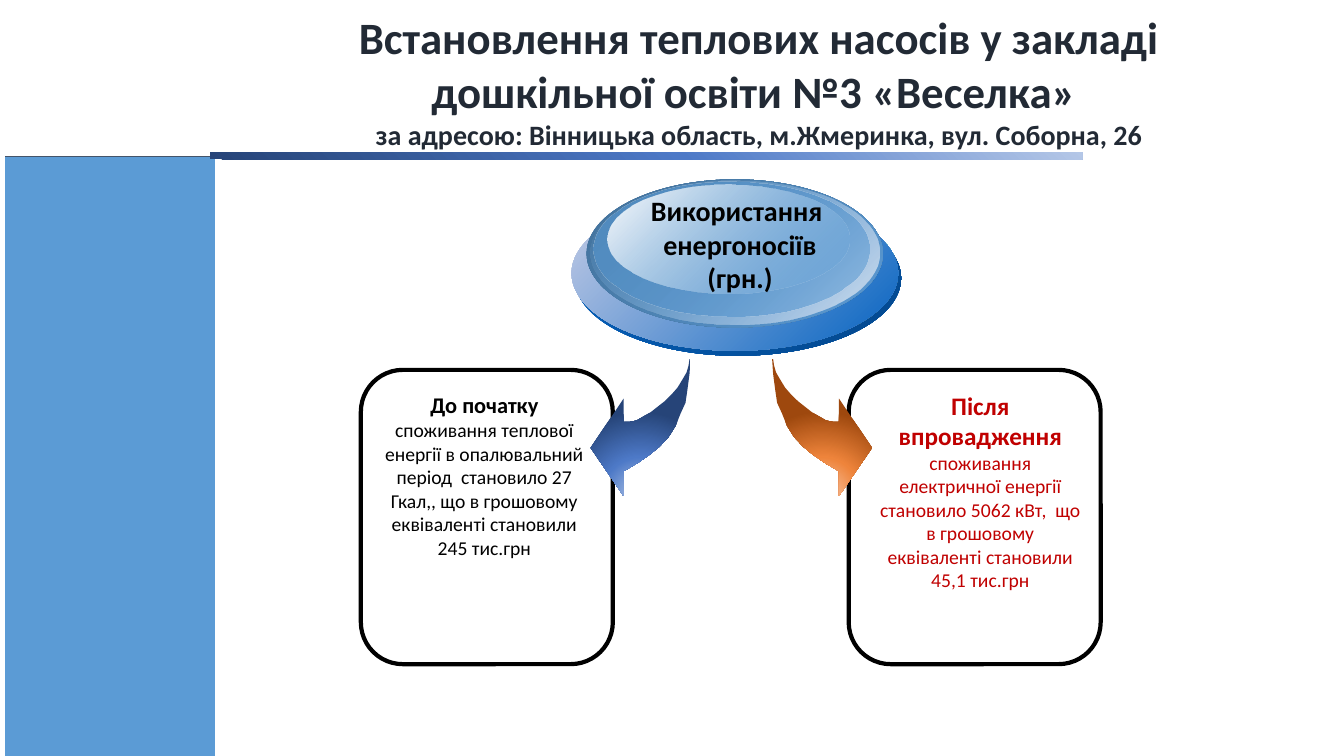
import dataclasses
import typing

import pptx
import pptx.dml.color
import pptx.enum.dml
import pptx.enum.shapes
import pptx.enum.text
import pptx.oxml
import pptx.oxml.ns
import pptx.util

SHAPES = pptx.enum.shapes.MSO_SHAPE
ANCHOR = pptx.enum.text.MSO_ANCHOR
WIDTH, HEIGHT = pptx.util.Inches(13.33), pptx.util.Inches(7.5)


# Theme: colours, gradients and type sizes
class Stop(typing.NamedTuple):
    position: int
    color: str
    opacity: int = 100


@dataclasses.dataclass(frozen=True)
class Theme:
    font: str = "Calibri"
    ink: str = "000000"
    heading: str = "222A35"
    accent: str = "C00000"
    sky: str = "5B9BD5"
    slate: str = "44546A"
    title_size: int = 32
    subtitle_size: int = 20
    after_size: int = 18
    before_size: int = 16
    body_size: int = 14
    blue: tuple[Stop, ...] = (Stop(0, "B4C7E7"), Stop(46, "4D79C7"), Stop(100, "264478"))
    orange: tuple[Stop, ...] = (Stop(0, "F8CBAD"), Stop(46, "EE843B"), Stop(100, "9E480E"))


THEME = Theme()


# Layout: every length is a percentage of the slide's width or height
class Area(typing.NamedTuple):
    left: float
    top: float
    width: float
    height: float

    def emu(self) -> tuple[int, int, int, int]:
        return (round(self.left * WIDTH / 100), round(self.top * HEIGHT / 100),
                round(self.width * WIDTH / 100), round(self.height * HEIGHT / 100))


class Run(typing.NamedTuple):
    text: str
    size: int
    color: str
    bold: bool = False


@dataclasses.dataclass(frozen=True)
class Caption:
    area: Area
    paragraphs: list[list[Run]]
    wrap: bool = True
    anchor: typing.Any = ANCHOR.TOP


@dataclasses.dataclass(frozen=True)
class Arrow:
    tail: float
    direction: int
    stops: tuple[Stop, ...]


class Layer(typing.NamedTuple):
    area: Area
    stops: tuple[Stop, ...]


CARDS = [Area(left, 48.93, 18.75, 38.93) for left in (63.15, 26.85)]
RULE = Area(15.6, 20.13, 64.95, 0.93)
SIDEBAR = Area(0.38, 20.67, 15.6, 79.33)

ARROWS = [Arrow(51.38, -1, THEME.blue), Arrow(57.45, 1, THEME.orange)]
ARROW_TOP, ARROW_WIDTH, ARROW_HEIGHT = 47.47, 7.43, 18.13
# Percentages of the arrow's width (away from the tail) and height
ARROW_OUTLINE = [
    (0, 0), (1, 11), (3, 22), (5, 32), (10, 40), (15, 49), (22, 57), (31, 64), (41, 70),
    (53, 76), (67, 82), (67, 100), (100, 65), (67, 29), (67, 46), (61, 46), (54, 45),
    (47, 42), (40, 39), (33, 35), (26, 31), (19, 26), (13, 21), (8, 15), (4, 10), (2, 5), (1, 0),
]

BUTTON = [
    Layer(Area(42.75, 26.53, 24.3, 20.53), (Stop(0, "0563C1"), Stop(100, "04488D"))),
    Layer(Area(42.53, 25.87, 24.3, 20.53), (Stop(0, "C6CDE6"), Stop(100, "0563C1"))),
    Layer(Area(43.65, 23.73, 22.05, 19.6), (Stop(0, "416F98"), Stop(100, THEME.sky))),
    Layer(Area(43.95, 23.87, 21.45, 19.07), (Stop(0, THEME.sky, 0), Stop(100, "D8E3F1"))),
    Layer(Area(44.18, 24, 20.48, 17.87), (Stop(0, "528CC0"), Stop(100, THEME.sky, 48))),
    Layer(Area(45.23, 24.4, 18, 14.4), (Stop(0, "FFFFFF"), Stop(100, THEME.sky, 38))),
]

BEFORE = Caption(Area(27.68, 51.07, 16.73, 23.73), [
    [Run("До початку", THEME.before_size, THEME.ink, True)],
    [Run("споживання теплової енергії в опалювальний період  становило 27 Гкал,, "
         "що в грошовому еквіваленті становили 245 тис.грн", THEME.body_size, THEME.ink)],
])
AFTER = Caption(Area(64.58, 50.93, 16.73, 31.47), [[
    Run("Після впровадження ", THEME.after_size, THEME.accent, True),
    Run("споживання електричної енергії становило 5062 кВт,  що в грошовому "
        "еквіваленті становили 45,1 тис.грн", THEME.body_size, THEME.accent),
]])
USAGE = Caption(Area(47.63, 24.93, 14.85, 14.8), [
    [Run(line, THEME.subtitle_size, THEME.ink, True)]
    for line in ("Використання ", "енергоносіїв", "(грн.)")
], wrap=False)
TITLE = Caption(Area(18.08, 3.87, 76.8, 13.6), [[
    Run("Встановлення теплових насосів у закладі дошкільної освіти №3 «Веселка» \n",
        THEME.title_size, THEME.heading, True),
    Run("за адресою: Вінницька область, м.Жмеринка, вул. Соборна, 26",
        THEME.subtitle_size, THEME.heading, True),
]], anchor=ANCHOR.MIDDLE)

LINEAR = '<a:lin ang="2700000" scaled="0"/>'


def radial(left: int, top: int, right: int, bottom: int) -> str:
    return (f'<a:path path="circle"><a:fillToRect l="{left}000" t="{top}000" '
            f'r="{right}000" b="{bottom}000"/></a:path>')


def rgb(color: str) -> pptx.dml.color.RGBColor:
    return pptx.dml.color.RGBColor.from_string(color)


# Drawing functions
def add_plain(slide: typing.Any, kind: typing.Any, area: Area) -> typing.Any:
    shape = slide.shapes.add_shape(kind, *area.emu())
    shape.shadow.inherit = False
    shape.fill.background()
    shape.line.fill.background()
    return shape


def fill_gradient(shape: typing.Any, stops: tuple[Stop, ...], course: str) -> None:
    shape.fill.background()
    marks = "".join(
        f'<a:gs pos="{stop.position * 1000}"><a:srgbClr val="{stop.color}">'
        f'<a:alpha val="{stop.opacity * 1000}"/></a:srgbClr></a:gs>' for stop in stops)
    gradient = pptx.oxml.parse_xml(
        f'<a:gradFill {pptx.oxml.ns.nsdecls("a")} rotWithShape="1">'
        f'<a:gsLst>{marks}</a:gsLst>{course}</a:gradFill>')
    properties = shape.element.spPr
    properties.replace(properties.find(pptx.oxml.ns.qn("a:noFill")), gradient)


def add_arrow(slide: typing.Any, arrow: Arrow) -> None:
    points = [
        (round((arrow.tail + arrow.direction * ARROW_WIDTH * x / 100) * WIDTH / 100),
         round((ARROW_TOP + ARROW_HEIGHT * y / 100) * HEIGHT / 100))
        for x, y in ARROW_OUTLINE]
    builder = slide.shapes.build_freeform(*points[0])
    builder.add_line_segments(points[1:], close=True)
    shape = builder.convert_to_shape()
    shape.shadow.inherit = False
    shape.line.fill.background()
    fill_gradient(shape, arrow.stops, radial(50, 130, 50, -30))


def add_caption(slide: typing.Any, caption: Caption) -> None:
    frame = slide.shapes.add_textbox(*caption.area.emu()).text_frame
    frame.word_wrap = caption.wrap
    frame.vertical_anchor = caption.anchor
    for index, runs in enumerate(caption.paragraphs):
        paragraph = frame.add_paragraph() if index else frame.paragraphs[0]
        paragraph.alignment = pptx.enum.text.PP_ALIGN.CENTER
        for part in runs:
            run = paragraph.add_run()
            run.text = part.text.rstrip("\n")
            formats = {"name": THEME.font, "size": pptx.util.Pt(part.size), "bold": part.bold}
            for attribute, value in formats.items():
                setattr(run.font, attribute, value)
            run.font.color.rgb = rgb(part.color)
            if part.text.endswith("\n"):
                paragraph.add_line_break()


def main() -> None:
    deck = pptx.Presentation()
    deck.slide_width, deck.slide_height = WIDTH, HEIGHT
    slide = deck.slides.add_slide(deck.slide_layouts[6])

    # Sidebar and rule under the title
    sidebar = add_plain(slide, SHAPES.RECTANGLE, SIDEBAR)
    sidebar.fill.patterned()
    sidebar.fill.pattern = pptx.enum.dml.MSO_PATTERN.DARK_HORIZONTAL
    sidebar.fill.fore_color.rgb = rgb(THEME.sky)
    sidebar.fill.back_color.rgb = rgb(THEME.slate)
    rule = add_plain(slide, SHAPES.RECTANGLE, RULE)
    fill_gradient(rule, THEME.blue, radial(100, 0, 0, 100))

    # Before and after cards with arrows
    for area in CARDS:
        card = add_plain(slide, SHAPES.ROUNDED_RECTANGLE, area)
        card.line.color.rgb = rgb(THEME.ink)
        card.line.width = pptx.util.Pt(3)
    add_caption(slide, BEFORE)
    for arrow in ARROWS:
        add_arrow(slide, arrow)

    # Glossy button
    for layer in BUTTON:
        fill_gradient(add_plain(slide, SHAPES.OVAL, layer.area), layer.stops, LINEAR)

    for caption in (USAGE, AFTER, TITLE):
        add_caption(slide, caption)
    deck.save("out.pptx")


if __name__ == "__main__":
    main()
